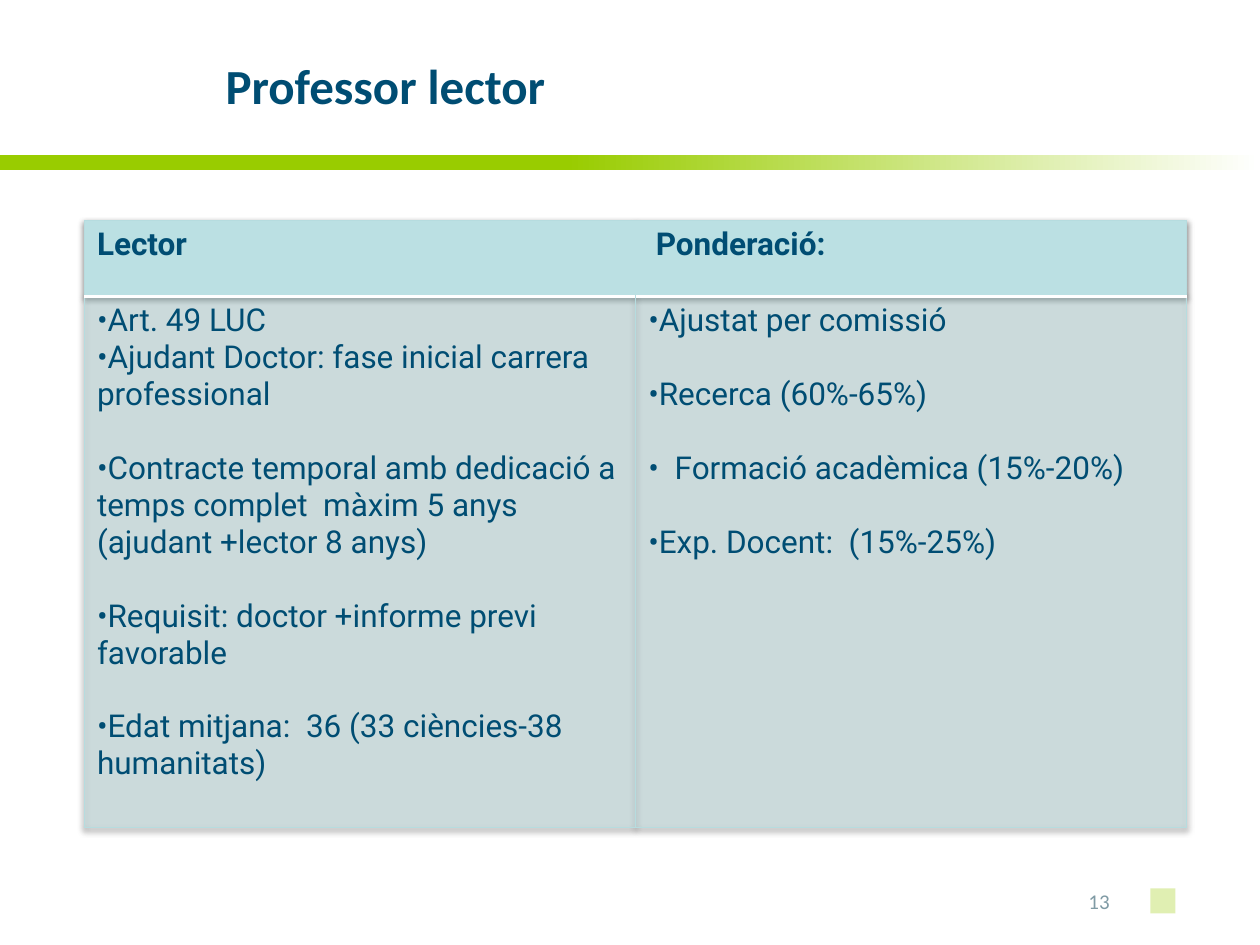
import pptx
import pptx.dml.color
import pptx.enum.dml
import pptx.enum.shapes
import pptx.enum.text
import pptx.oxml
import pptx.oxml.ns
import pptx.util
from lxml import etree
from pptx.util import Inches

NAVY = pptx.dml.color.RGBColor(0x00, 0x4D, 0x73)
GREY_BLUE = pptx.dml.color.RGBColor(0x80, 0x9B, 0xA5)
GREEN = pptx.dml.color.RGBColor(0x99, 0xCC, 0x00)
WHITE = pptx.dml.color.RGBColor(0xFF, 0xFF, 0xFF)
AQUA = pptx.dml.color.RGBColor(0xBB, 0xE0, 0xE3)
AQUA_EDGE = pptx.dml.color.RGBColor(0xB6, 0xDC, 0xDF)

qn = pptx.oxml.ns.qn
NS = pptx.oxml.ns.nsdecls("a")
RECTANGLE = pptx.enum.shapes.MSO_SHAPE.RECTANGLE
MIDDLE = pptx.enum.text.MSO_ANCHOR.MIDDLE
LEFT = pptx.enum.text.PP_ALIGN.LEFT


def set_font(paragraph, name, size, color, bold=False):
    for run in paragraph.runs:
        run.font.name = name
        run.font.size = pptx.util.Pt(size)
        run.font.bold = bold
        run.font.color.rgb = color


def set_solid(fill, parent, color, percent=100):
    fill.solid()
    fill.fore_color.rgb = color
    if percent < 100:
        rgb = parent.find(qn("a:solidFill")).find(qn("a:srgbClr"))
        etree.SubElement(rgb, qn("a:alpha"), val=str(percent * 1000))


prs = pptx.Presentation()
prs.slide_width, prs.slide_height = Inches(10), Inches(7.5)
slide = prs.slides.add_slide(prs.slide_layouts[5])

# Green band and corner square
band = slide.shapes.add_shape(RECTANGLE, 0, Inches(1.23), Inches(10), Inches(0.12))
band.fill.gradient()
band.fill.gradient_angle = 0
for stop, color, position in zip(band.fill.gradient_stops, (GREEN, WHITE), (0.45, 1)):
    stop.color.rgb = color
    stop.position = position
corner = slide.shapes.add_shape(RECTANGLE, Inches(9.13), Inches(7.05), Inches(0.2), Inches(0.2))
set_solid(corner.fill, corner._element.spPr, GREEN, 30)
for decoration in (band, corner):
    decoration.line.fill.background()
    decoration.shadow.inherit = False

# Page number
page_number = slide.shapes.add_textbox(Inches(8.54), Inches(6.95), Inches(0.55), Inches(0.4))
page_number.text_frame.word_wrap = True
page_number.text_frame.vertical_anchor = MIDDLE
page_number.text_frame.text = "13"
set_font(page_number.text_frame.paragraphs[0], "Calibri", 12, GREY_BLUE)

# Title
title = slide.shapes.title
title.left, title.top, title.width, title.height = Inches(1.69), Inches(0.36), Inches(7.64), Inches(0.63)
title.text_frame.text = "Professor lector"
title.text_frame.vertical_anchor = MIDDLE
title.text_frame.paragraphs[0].alignment = LEFT
set_font(title.text_frame.paragraphs[0], "Calibri", 28, NAVY, bold=True)

# Table with a soft shadow and no banding
table_width = Inches(8.75)
comparison = slide.shapes.add_table(2, 2, Inches(0.67), Inches(1.75), table_width, Inches(4.82)).table
comparison.horz_banding = False
for column in comparison.columns:
    column.width = table_width // 2
comparison.rows[0].height = Inches(0.6)
comparison.rows[1].height = Inches(4.22)
table_properties = comparison._tbl.tblPr
table_properties.find(qn("a:tableStyleId")).text = "{2D5ABB26-0587-4C30-8999-92F81FD0307C}"
table_properties.insert(0, pptx.oxml.parse_xml(
    f'<a:effectLst {NS}><a:outerShdw blurRad="40000" dist="20000" dir="5400000" rotWithShape="0">'
    '<a:srgbClr val="000000"><a:alpha val="38000"/></a:srgbClr></a:outerShdw></a:effectLst>'))

# Each item: text, whether a line of space precedes it, hanging indent in inches
headers = [("Lector", 0), ("Ponderació:", 0.06)]
bodies = [
    [("Art. 49 LUC", False, 0),
     ("Ajudant Doctor: fase inicial carrera professional", False, 0),
     ("Contracte temporal amb dedicació a temps complet  màxim 5 anys (ajudant +lector 8 anys)", True, 0),
     ("Requisit: doctor +informe previ favorable", True, 0),
     ("Edat mitjana:  36 (33 ciències-38 humanitats)", True, 0)],
    [("Ajustat per comissió", False, 0),
     ("Recerca (60%-65%)", True, 0),
     ("Formació acadèmica (15%-20%)", True, 0.21),
     ("Exp. Docent:  (15%-25%)", True, 0)],
]
for col, ((heading, indent), items) in enumerate(zip(headers, bodies)):
    header_cell, body_cell = comparison.cell(0, col), comparison.cell(1, col)
    header_cell.text_frame.text = heading
    header_cell.margin_left = Inches(0.1 + indent)
    set_font(header_cell.text_frame.paragraphs[0], "Roboto", 18, NAVY, bold=True)

    body_cell.text_frame.text = "\n".join(text for text, _, _ in items)
    for paragraph, (_, spaced, hanging) in zip(body_cell.text_frame.paragraphs, items):
        if spaced:
            paragraph.space_before = pptx.util.Pt(21.1)
        properties = paragraph._p.get_or_add_pPr()
        properties.set("marL", str(Inches(hanging)))
        properties.set("indent", str(-Inches(hanging)))
        etree.SubElement(properties, qn("a:buFont"), typeface="Roboto")
        etree.SubElement(properties, qn("a:buChar"), char="•")
        set_font(paragraph, "Roboto", 18, NAVY)

# Cell fills and borders: white rule under the header, aqua edges elsewhere
header_sides = [{"L": AQUA_EDGE}, {"R": AQUA_EDGE}]
for row, percent in enumerate((100, 40)):
    for col in range(2):
        cell = comparison.cell(row, col)
        cell_properties = cell._tc.get_or_add_tcPr()
        set_solid(cell.fill, cell_properties, AQUA, percent)
        if row == 0:
            borders = {**header_sides[col], "T": AQUA_EDGE, "B": WHITE}
        else:
            borders = {"L": AQUA_EDGE, "R": AQUA_EDGE, "T": WHITE, "B": AQUA_EDGE}
        ordered_sides = [side for side in "LRTB" if side in borders]
        for place, side in enumerate(ordered_sides):
            width = pptx.util.Pt(2 if borders[side] == WHITE else 0.75)
            cell_properties.insert(place, pptx.oxml.parse_xml(
                f'<a:ln{side} {NS} w="{width}"><a:solidFill>'
                f'<a:srgbClr val="{borders[side]}"/></a:solidFill></a:ln{side}>'))

prs.save("out.pptx")
